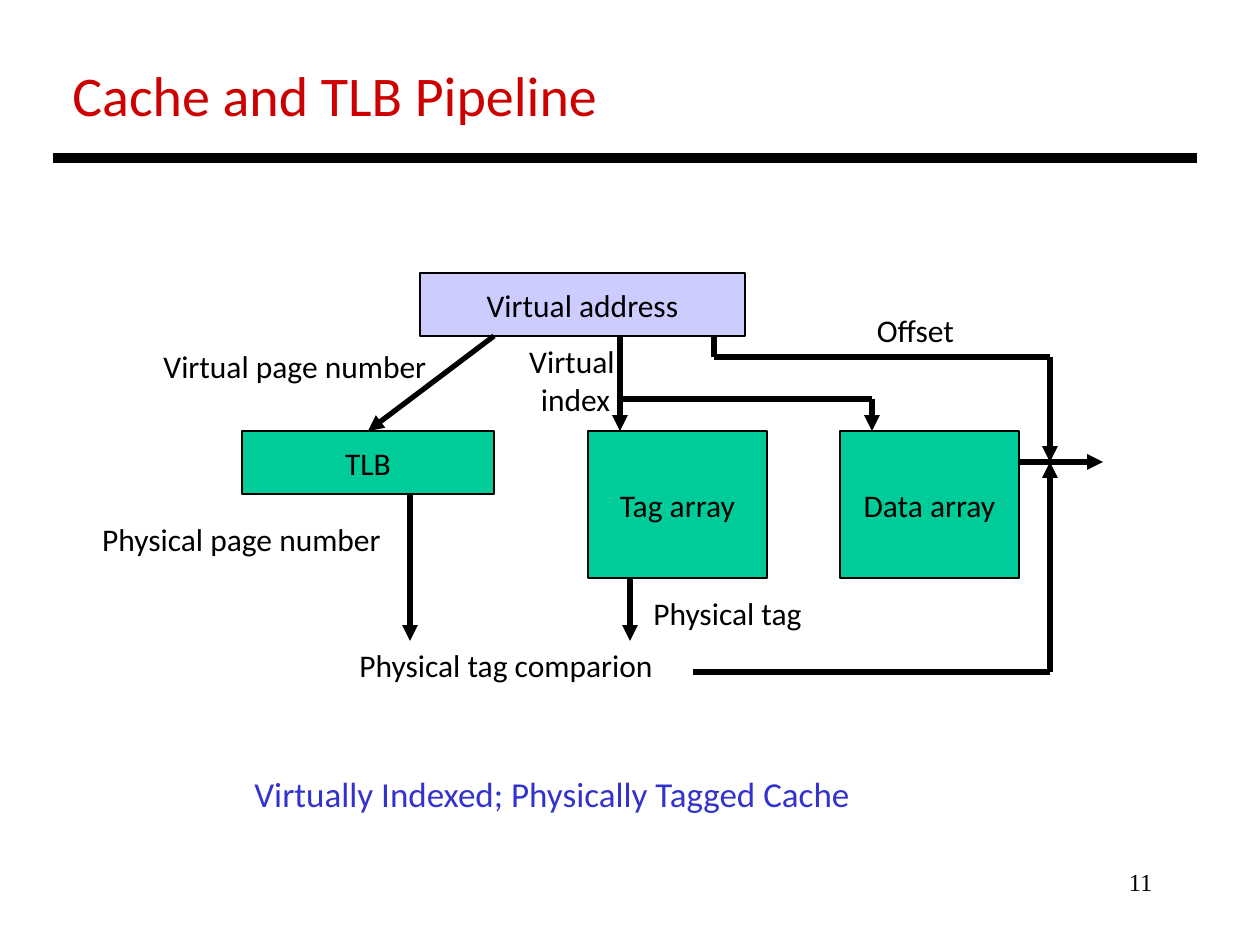
from dataclasses import dataclass
from itertools import pairwise

from lxml import etree
from pptx import Presentation
from pptx.dml.color import RGBColor
from pptx.enum.shapes import MSO_CONNECTOR, MSO_SHAPE
from pptx.enum.text import MSO_ANCHOR, MSO_AUTO_SIZE, PP_ALIGN
from pptx.oxml.ns import qn
from pptx.util import Pt

LEFT, MID, RIGHT = PP_ALIGN.LEFT, PP_ALIGN.CENTER, PP_ALIGN.RIGHT
MIDDLE = MSO_ANCHOR.MIDDLE
GROW, FIXED = MSO_AUTO_SIZE.SHAPE_TO_FIT_TEXT, MSO_AUTO_SIZE.NONE
RECT = MSO_SHAPE.RECTANGLE
STRAIGHT = MSO_CONNECTOR.STRAIGHT
SCALE = 914400 / 126


@dataclass(frozen=True)
class Theme:
    ink: str = "000000"
    title: str = "CC0000"
    note: str = "3333CC"
    store: str = "00CC99"
    address: str = "CCCCFF"
    font: str = "Calibri"
    serif: str = "Times New Roman"
    head: int = 32
    lead: int = 20
    body: int = 18
    small: int = 14
    rule: float = 6
    wire: float = 3
    edge: float = 0.75


THEME = Theme()


def px(*values):
    return [round(value * SCALE) for value in values]


def color(code):
    return RGBColor.from_string(code)


def write(frame, text, size, ink, align, font=THEME.font):
    for index, line in enumerate(text.split("\n")):
        para = frame.paragraphs[0] if index == 0 else frame.add_paragraph()
        para.alignment = align
        run = para.add_run()
        run.text = line
        run.font.name = font
        run.font.size = Pt(size)
        run.font.color.rgb = color(ink)


def label(slide, area, text, size=THEME.body, ink=THEME.ink, align=MID):
    frame = slide.shapes.add_textbox(*px(*area)).text_frame
    frame.word_wrap = False
    frame.auto_size = GROW
    write(frame, text, size, ink, align)


def number(slide, area, text):
    frame = slide.shapes.add_textbox(*px(*area)).text_frame
    frame.word_wrap = True
    frame.auto_size = FIXED
    write(frame, text, THEME.small, THEME.ink, RIGHT, THEME.serif)


def block(slide, area, text, fill=THEME.store):
    shape = slide.shapes.add_shape(RECT, *px(*area))
    shape.shadow.inherit = False
    shape.fill.solid()
    shape.fill.fore_color.rgb = color(fill)
    shape.line.color.rgb = color(THEME.ink)
    shape.line.width = Pt(THEME.edge)
    frame = shape.text_frame
    frame.word_wrap = False
    frame.vertical_anchor = MIDDLE
    write(frame, text, THEME.body, THEME.ink, MID)


def line(slide, start, end, width=THEME.wire):
    wire = slide.shapes.add_connector(STRAIGHT, *px(*start, *end))
    wire.line.color.rgb = color(THEME.ink)
    wire.line.width = Pt(width)
    etree.SubElement(wire._element.spPr, qn("a:effectLst"))
    return wire


def route(slide, *points, arrow=True):
    for start, end in pairwise(points):
        wire = line(slide, start, end)
    if arrow:
        etree.SubElement(wire.line._get_or_add_ln(), qn("a:tailEnd"), type="triangle")


def main():
    deck = Presentation()
    deck.slide_width, deck.slide_height = px(1260, 945)
    slide = deck.slides.add_slide(deck.slide_layouts[6])

    number(slide, (903, 861, 262, 63), "11")
    label(slide, (60, 54, 556, 81), "Cache and TLB Pipeline", THEME.head, THEME.title, LEFT)
    line(slide, (53, 158), (1197, 158), THEME.rule)

    block(slide, (242, 431, 252, 63), "TLB")
    block(slide, (420, 273, 325, 63), "Virtual address", THEME.address)
    for left, text in ((588, "Tag array"), (840, "Data array")):
        block(slide, (left, 431, 179, 147), text)

    route(slide, (494, 336), (368, 431))
    route(slide, (620, 336), (620, 431))
    route(slide, (620, 399), (872, 399), (872, 431))
    route(slide, (410, 494), (410, 641))
    route(slide, (630, 578), (630, 641))
    route(slide, (1019, 462), (1103, 462))
    route(slide, (714, 336), (714, 357), (1050, 357), (1050, 462))
    route(slide, (693, 672), (1050, 672), (1050, 462))

    label(slide, (347, 640, 321, 50), "Physical tag comparion", align=LEFT)
    label(slide, (149, 341, 292, 50), "Virtual page number")
    label(slide, (514, 336, 123, 88), "Virtual \nindex")
    label(slide, (864, 305, 103, 50), "Offset")
    label(slide, (88, 514, 307, 50), "Physical page number")
    label(slide, (640, 588, 175, 50), "Physical tag")
    label(slide, (242, 766, 626, 55), "Virtually Indexed; Physically Tagged Cache",
          THEME.lead, THEME.note, LEFT)

    deck.save("out.pptx")


if __name__ == "__main__":
    main()
